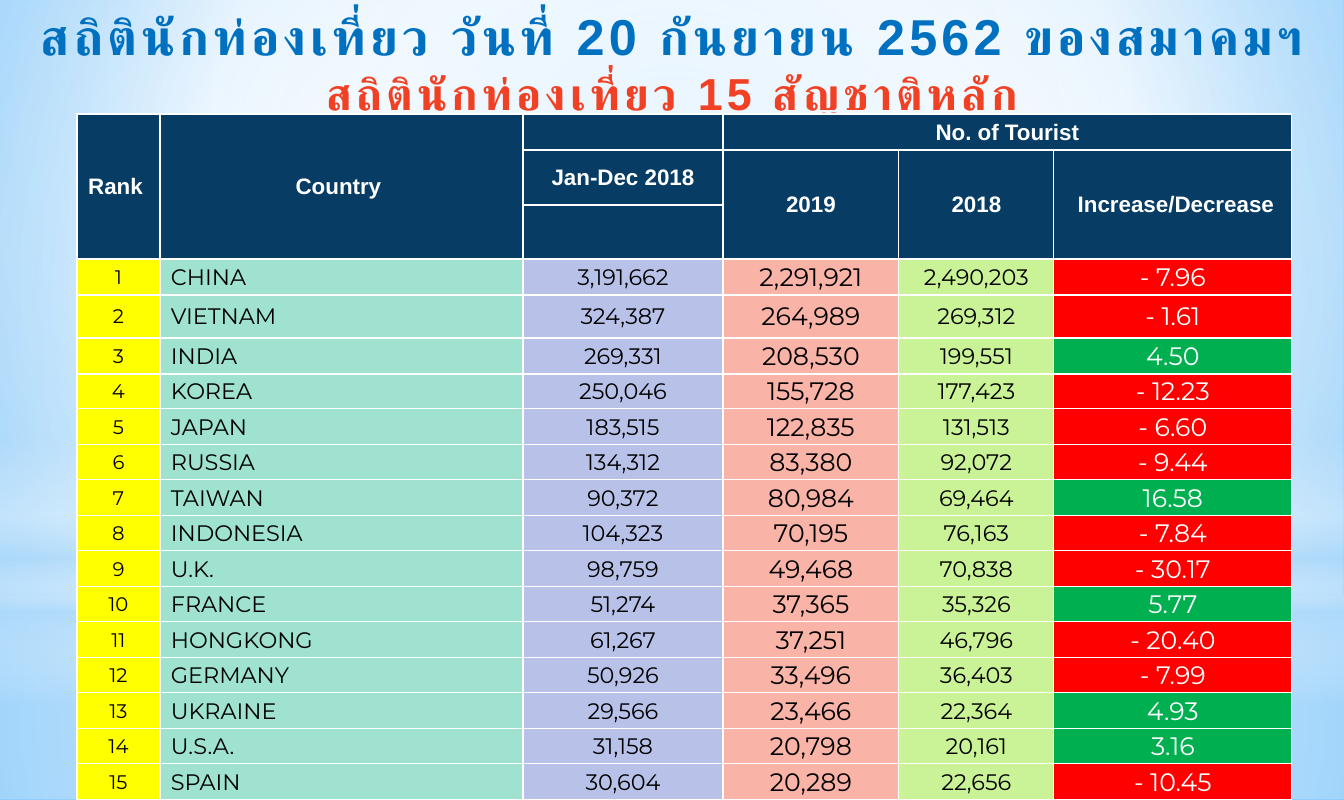
import pptx
import pptx.util
import pptx.dml.color
import pptx.enum.shapes
import pptx.enum.text
import pptx.oxml
import pptx.oxml.ns

RGB = pptx.dml.color.RGBColor
SHAPE = pptx.enum.shapes.MSO_SHAPE
ALIGN = pptx.enum.text.PP_ALIGN
ANCHOR = pptx.enum.text.MSO_ANCHOR
qn = pptx.oxml.ns.qn

WIDE, HIGH = 1344, 800
SCALE = 914400 / 100.8

WHITE = RGB(0xFF, 0xFF, 0xFF)
BLACK = RGB(0, 0, 0)
BLUE = RGB(0x00, 0x70, 0xC0)
ORANGE = RGB(0xF1, 0x41, 0x24)
NAVY = RGB(0x07, 0x3C, 0x65)
YELLOW = RGB(0xFF, 0xFF, 0x00)
MINT = RGB(0x9E, 0xE2, 0xCF)
LILAC = RGB(0xB8, 0xC2, 0xE9)
SALMON = RGB(0xF9, 0xB3, 0xA7)
LIME = RGB(0xCA, 0xF2, 0x97)
RED = RGB(0xFF, 0, 0)
GREEN = RGB(0x00, 0xB0, 0x50)
SKY = RGB(0x9E, 0xD5, 0xFF)
AZURE = RGB(0x5B, 0xB9, 0xFF)
PALE = RGB(0xB4, 0xDC, 0xFA)

TITLES = [
    ("สถิตินักท่องเที่ยว วันที่ 20 กันยายน 2562 ของสมาคมฯ", 36, BLUE),
    ("สถิตินักท่องเที่ยว 15 สัญชาติหลัก", 32, ORANGE),
]
COLS = [83, 363, 200, 176, 155, 238]
HEADS = [36, 55, 54]
# Row, column, rows spanned, columns spanned, text, left inset, right inset
LABELS = [
    (0, 0, 3, 1, "Rank", 1, 7),
    (0, 1, 3, 1, "Country", 1, 7),
    (0, 3, 1, 3, "No. of Tourist", 1, 1),
    (1, 2, 1, 1, "Jan-Dec 2018", 1, 1),
    (1, 3, 2, 1, "2019", 1, 1),
    (1, 4, 2, 1, "2018", 1, 1),
    (1, 5, 2, 1, "Increase/Decrease", 7, 1),
]
ROWS = [
    ("CHINA", "3,191,662", "2,291,921", "2,490,203", "- 7.96"),
    ("VIETNAM", "324,387", "264,989", "269,312", "- 1.61"),
    ("INDIA", "269,331", "208,530", "199,551", "4.50"),
    ("KOREA", "250,046", "155,728", "177,423", "- 12.23"),
    ("JAPAN", "183,515", "122,835", "131,513", "- 6.60"),
    ("RUSSIA", "134,312", "83,380", "92,072", "- 9.44"),
    ("TAIWAN", "90,372", "80,984", "69,464", "16.58"),
    ("INDONESIA", "104,323", "70,195", "76,163", "- 7.84"),
    ("U.K.", "98,759", "49,468", "70,838", "- 30.17"),
    ("FRANCE", "51,274", "37,365", "35,326", "5.77"),
    ("HONGKONG", "61,267", "37,251", "46,796", "- 20.40"),
    ("GERMANY", "50,926", "33,496", "36,403", "- 7.99"),
    ("UKRAINE", "29,566", "23,466", "22,364", "4.93"),
    ("U.S.A.", "31,158", "20,798", "20,161", "3.16"),
    ("SPAIN", "30,604", "20,289", "22,656", "- 10.45"),
]
# Fill and text size of each column
STYLES = [(YELLOW, 14), (MINT, 16), (LILAC, 16), (SALMON, 18), (LIME, 16), (RED, 18)]


def px(num):
    return pptx.util.Emu(round(num * SCALE))


def blend(props, stops, rect=None):
    """Turn a solid fill into a gradient: round if rect is given, else downward."""
    marks = "".join(
        f'<a:gs pos="{pos * 1000}"><a:srgbClr val="{tone}">'
        f'<a:alpha val="{clear * 1000}"/></a:srgbClr></a:gs>'
        for pos, tone, clear in stops)
    if rect:
        sides = " ".join(f'{side}="{num * 1000}"' for side, num in zip("ltrb", rect))
        form = f'<a:path path="circle"><a:fillToRect {sides}/></a:path>'
    else:
        form = '<a:lin ang="5400000" scaled="0"/>'
    grad = pptx.oxml.parse_xml(
        f'<a:gradFill {pptx.oxml.ns.nsdecls("a")} rotWithShape="1">'
        f'<a:gsLst>{marks}</a:gsLst>{form}</a:gradFill>')
    props.replace(props.find(qn("a:solidFill")), grad)


def write(para, text, size, tone, font, bold=False):
    run = para.add_run()
    run.text = text
    run.font.size = pptx.util.Pt(size)
    run.font.name = font
    run.font.bold = bold
    run.font.color.rgb = tone
    return run


def backdrop(slide, wide, high):
    fill = slide.background.fill
    fill.solid()
    fill.fore_color.rgb = WHITE
    blend(slide.element.find(".//" + qn("p:bgPr")),
          [(0, SKY, 100), (60, WHITE, 100), (100, AZURE, 100)], (20, 10, 20, 60))
    mid = (50, 50, 50, 50)
    layers = [
        (SHAPE.RECTANGLE, 596, high - 596,
         [(0, WHITE, 91), (37, WHITE, 76), (100, PALE, 79)], mid),
        (SHAPE.RECTANGLE, 0, 596,
         [(0, WHITE, 89), (48, WHITE, 62), (100, PALE, 79)], mid),
        (SHAPE.RECTANGLE, 439, 266,
         [(0, WHITE, 0), (29, WHITE, 30), (45, PALE, 40), (55, WHITE, 26),
          (65, PALE, 60), (100, WHITE, 0)], None),
        (SHAPE.OVAL, 186, 596, [(0, WHITE, 100), (56, WHITE, 0)], mid),
    ]
    for kind, top, tall, stops, rect in layers:
        glow = slide.shapes.add_shape(kind, 0, px(top), px(wide), px(tall))
        glow.shadow.inherit = False
        glow.line.fill.background()
        glow.fill.solid()
        blend(glow.element.spPr, stops, rect)


def heading(slide, left, top, wide, high):
    title = slide.shapes.title
    title.left, title.top, title.width, title.height = map(px, (left, top, wide, high))
    # Bring the title above the backdrop
    title.element.getparent().append(title.element)
    frame = title.text_frame
    frame.word_wrap = True
    frame.auto_size = pptx.enum.text.MSO_AUTO_SIZE.NONE
    frame.vertical_anchor = ANCHOR.TOP
    for num, (text, size, tone) in enumerate(TITLES):
        para = frame.add_paragraph() if num else frame.paragraphs[0]
        para.alignment = ALIGN.CENTER
        para.line_spacing = 1.0
        para.space_before = pptx.util.Pt(0)
        run = write(para, text, size, tone, "Arial", True)
        run.font._element.set("spc", "300")


def dress(cell, tone):
    """Give a cell its borders, insets and fill."""
    props = cell._tc.get_or_add_tcPr()
    for side in "LRTB":
        props.append(pptx.oxml.parse_xml(
            f'<a:ln{side} {pptx.oxml.ns.nsdecls("a")} w="12700"><a:solidFill>'
            f'<a:srgbClr val="{WHITE}"/></a:solidFill></a:ln{side}>'))
    cell.fill.solid()
    cell.fill.fore_color.rgb = tone
    cell.margin_left = cell.margin_right = cell.margin_top = px(1)
    cell.margin_bottom = 0
    cell.vertical_anchor = ANCHOR.MIDDLE


def ranking(slide, left, top, wide, high):
    # The second country's row is taller; the rest share the height
    tall = HEADS + [36, 43] + [36 - num % 2 for num in range(len(ROWS) - 2)]
    table = slide.shapes.add_table(len(tall), len(COLS), px(left), px(top),
                                   px(wide), px(high)).table
    table.first_row = table.horz_banding = False
    for col, width in zip(table.columns, COLS):
        col.width = px(width)
    for row, height in zip(table.rows, tall):
        row.height = px(height)

    # Header
    for row in range(len(HEADS)):
        for col in range(len(COLS)):
            dress(table.cell(row, col), NAVY)
    for row, col, down, across, text, start, end in LABELS:
        cell = table.cell(row, col)
        if down * across > 1:
            cell.merge(table.cell(row + down - 1, col + across - 1))
        cell.margin_left, cell.margin_right = px(start), px(end)
        para = cell.text_frame.paragraphs[0]
        para.alignment = ALIGN.CENTER
        write(para, text, 16, WHITE, "Arial", True)

    # Countries
    for rank, data in enumerate(ROWS, 1):
        for col, text in enumerate((str(rank),) + data):
            tone, size = STYLES[col]
            last = col == len(COLS) - 1
            if last and not text.startswith("-"):
                tone = GREEN
            cell = table.cell(len(HEADS) + rank - 1, col)
            dress(cell, tone)
            para = cell.text_frame.paragraphs[0]
            para.alignment = ALIGN.CENTER
            if col == 1:
                para.alignment = ALIGN.LEFT
                cell.margin_left = px(11)
            write(para, text, size, WHITE if last else BLACK, "Montserrat")


def main():
    deck = pptx.Presentation()
    deck.slide_width, deck.slide_height = px(WIDE), px(HIGH)
    slide = deck.slides.add_slide(deck.slide_layouts[5])
    backdrop(slide, WIDE, HIGH)
    heading(slide, 0, 0, WIDE, 125)
    ranking(slide, 77, 114, sum(COLS), HIGH - 114)
    deck.save("out.pptx")


if __name__ == "__main__":
    main()
